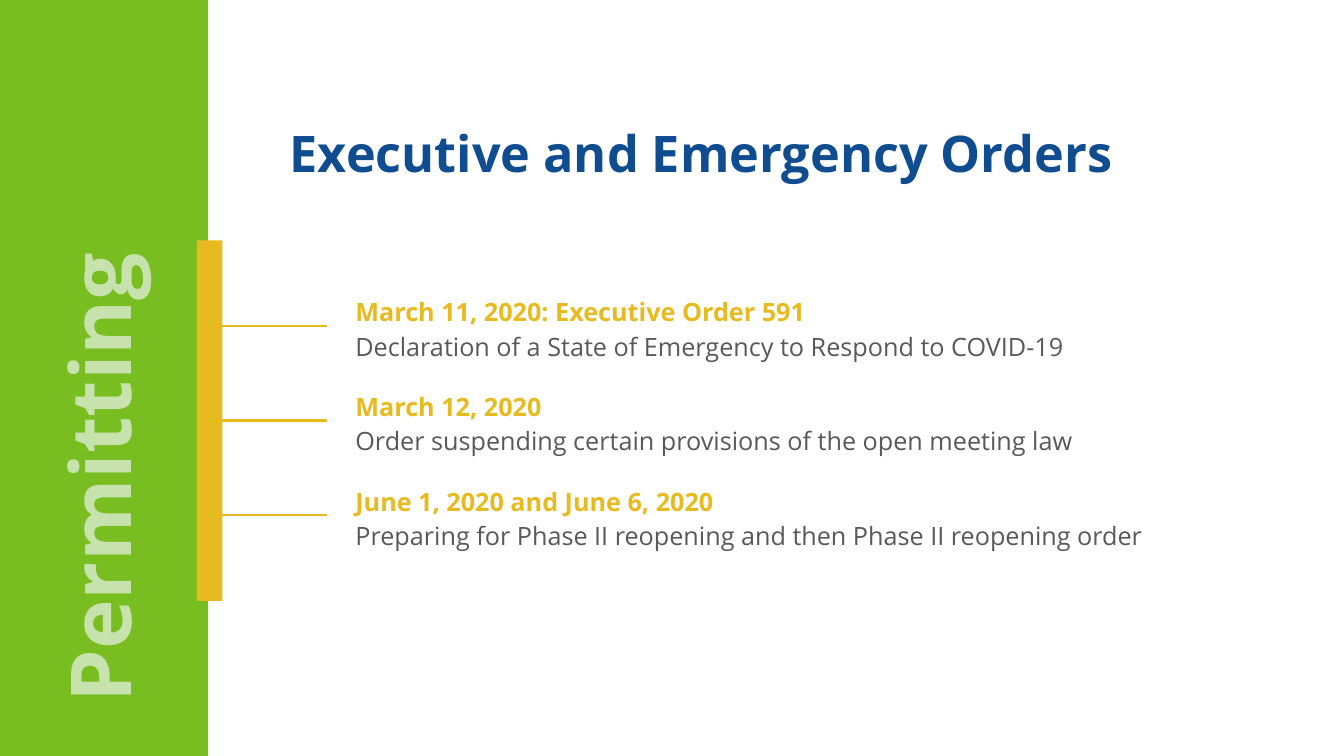
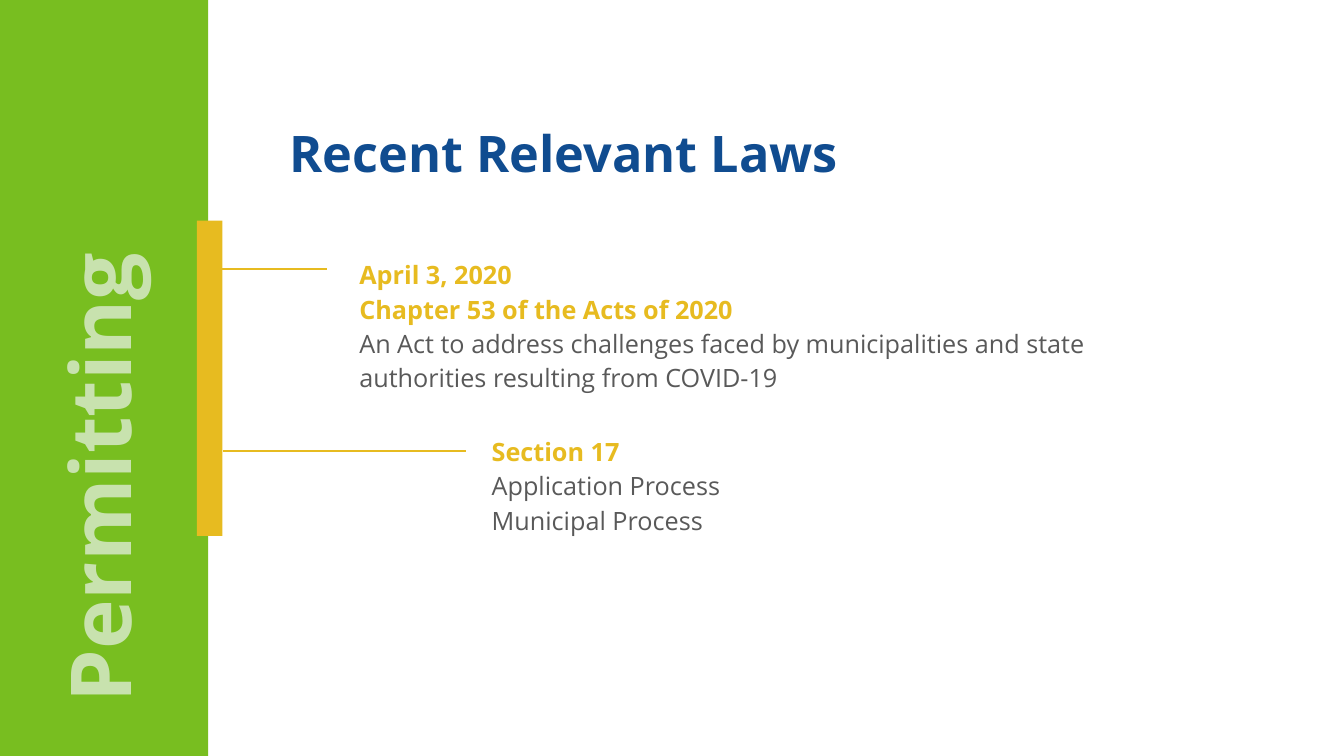
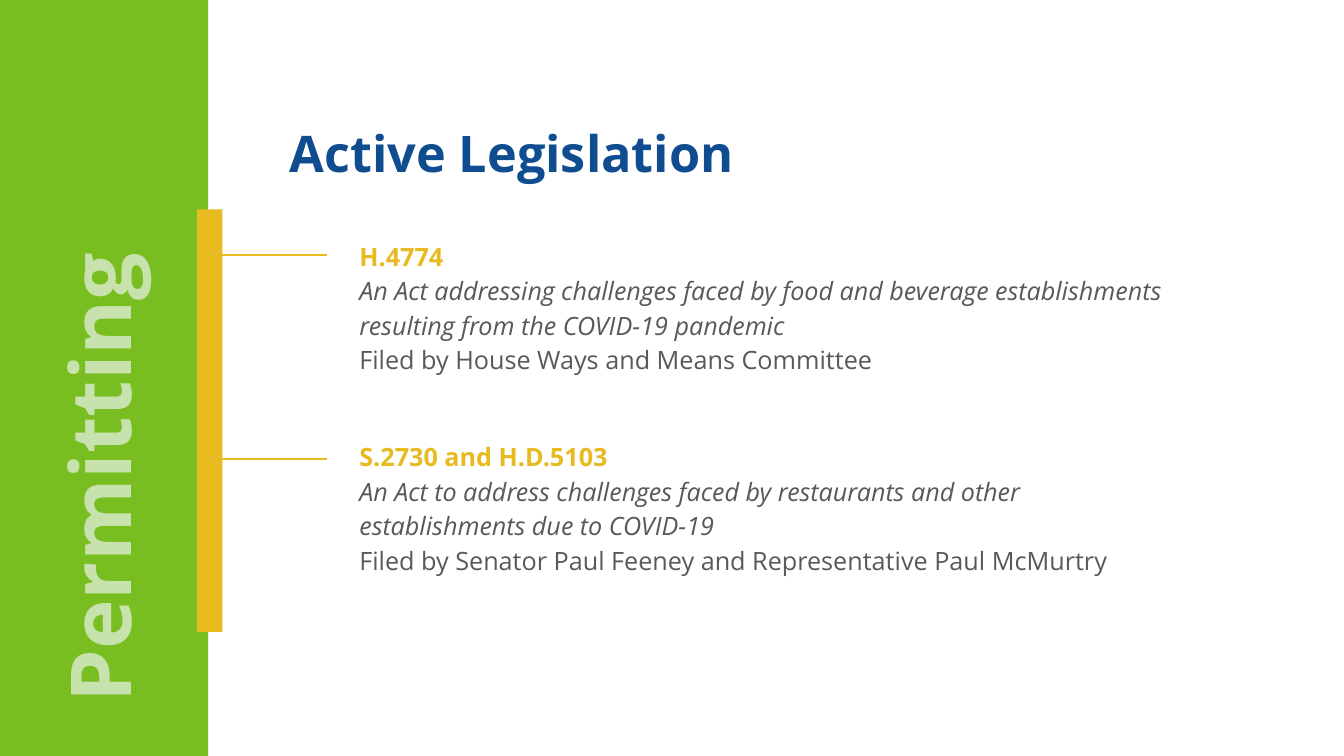
import dataclasses

import pptx
import pptx.dml.color
import pptx.enum.shapes
import pptx.enum.text
import pptx.oxml
import pptx.util

# Shared look
COLOURS = {
    "band": "78BE20",
    "accent": "E7BB20",
    "body": "595959",
    "label": "C8E2AE",
    "title": "104C90",
}
FONT = "Open Sans"
WIDTH, HEIGHT = pptx.util.Inches(13.33), pptx.util.Inches(7.5)
TOPIC = "Permitting"

# Shared places, in percent of the slide's width or height
BAND_WIDTH = 15.5
BAR_CENTRE, BAR_WIDTH = 15.6, 1.9
RULE_END = 24.3
TITLE_PLACE = (20.8, 15.5, 67.8, 9.5)
LABEL_PLACE = (-11.55, 53.33, 37.7, 14.8)
LINE_HEIGHT, BOX_MARGIN = 4.6, 0.95

# Paragraph styles: colour, bold, italic
STYLES = {
    "heading": ("accent", True, False),
    "plain": ("body", False, False),
    "act": ("body", False, True),
}


@dataclasses.dataclass
class Entry:
    left: float
    top: float
    width: float
    lines: int
    rule: float
    paragraphs: list
    rule_start: float = BAND_WIDTH
    rule_end: float = RULE_END


def across(share):
    return round(WIDTH * share / 100)


def down(share):
    return round(HEIGHT * share / 100)


def frame(left, top, width, height):
    return across(left), down(top), across(width), down(height)


def colour(name):
    return pptx.dml.color.RGBColor.from_string(COLOURS[name])


# Text
def add_span(para, text, size, tone, bold=True, italic=False):
    span = para.add_run()
    span.text = text
    font = span.font
    font.name, font.size = FONT, pptx.util.Pt(size)
    font.bold, font.italic = bold, italic
    font.color.rgb = colour(tone)


def set_up_text(box):
    text = box.text_frame
    text.word_wrap = True
    text.auto_size = pptx.enum.text.MSO_AUTO_SIZE.SHAPE_TO_FIT_TEXT
    text.vertical_anchor = pptx.enum.text.MSO_ANCHOR.TOP
    text.paragraphs[0].alignment = pptx.enum.text.PP_ALIGN.LEFT
    return text


def add_title(page, text):
    box = page.shapes.title
    box.left, box.top, box.width, box.height = frame(*TITLE_PLACE)
    add_span(set_up_text(box).paragraphs[0], text, 36, "title")


def add_side_label(page):
    box = page.shapes.add_textbox(*frame(*LABEL_PLACE))
    box.rotation = 270
    add_span(set_up_text(box).paragraphs[0], TOPIC, 60, "label")


# Bars and rules
def add_block(page, place, tone):
    block = page.shapes.add_shape(
        pptx.enum.shapes.MSO_SHAPE.RECTANGLE, *frame(*place))
    block.shadow.inherit = False
    block.fill.solid()
    block.fill.fore_color.rgb = colour(tone)
    block.line.fill.background()


def add_rule(page, start, end, height):
    rule = page.shapes.add_connector(
        pptx.enum.shapes.MSO_CONNECTOR.STRAIGHT,
        across(start), down(height), across(end), down(height))
    rule.line.color.rgb = colour("accent")
    rule.line.width = pptx.util.Pt(1.5)
    properties = rule._element.spPr
    properties.append(pptx.oxml.parse_xml(
        '<a:effectLst xmlns:a='
        '"http://schemas.openxmlformats.org/drawingml/2006/main"/>'))


def add_entry(page, entry):
    height = BOX_MARGIN + LINE_HEIGHT * entry.lines
    box = page.shapes.add_textbox(
        *frame(entry.left, entry.top, entry.width, height))
    text = set_up_text(box)
    for number, (style, words) in enumerate(entry.paragraphs):
        para = text.add_paragraph() if number else text.paragraphs[0]
        para.line_spacing = 1.14
        add_span(para, words, 18, *STYLES[style])
    add_rule(page, entry.rule_start, entry.rule_end, entry.rule)


def add_page(deck, title, bar_top, bar_height, entries):
    page = deck.slides.add_slide(deck.slide_layouts[5])
    add_title(page, title)
    add_block(page, (0, 0, BAND_WIDTH, 100), "band")
    bar_left = BAR_CENTRE - BAR_WIDTH / 2
    add_block(page, (bar_left, bar_top, BAR_WIDTH, bar_height), "accent")
    for entry in entries:
        add_entry(page, entry)
    add_side_label(page)


# Content
def order_entries():
    orders = [
        (61.4, "March 11, 2020: Executive Order 591",
         "Declaration of a State of Emergency to Respond to COVID-19"),
        (58.7, "March 12, 2020",
         "Order suspending certain provisions of the open meeting law"),
        (62.9, "June 1, 2020 and June 6, 2020",
         "Preparing for Phase II reopening and then Phase II reopening order"),
    ]
    first, step = 38, 12.55
    entries = []
    for row, (width, date, summary) in enumerate(orders):
        top = first + step * row
        middle = top + BOX_MARGIN / 2 + LINE_HEIGHT
        entries.append(Entry(25.7, top, width, 2, middle,
                             [("heading", date), ("plain", summary)]))
    return entries


def law_entries():
    return [
        Entry(26, 33.1, 59.7, 4, 35.6, [
            ("heading", "April 3, 2020"),
            ("heading", "Chapter 53 of the Acts of 2020"),
            ("plain", "An Act to address challenges faced by municipalities "
                      "and state authorities resulting from COVID-19"),
        ]),
        Entry(35.85, 56.5, 20.55, 3, 59.7, [
            ("heading", "Section 17"),
            ("plain", "Application Process"),
            ("plain", "Municipal Process"),
        ], rule_start=16.6, rule_end=34.7),
    ]


def bill_entries():
    return [
        Entry(26, 30.7, 61.4, 4, 33.7, [
            ("heading", "H.4774"),
            ("act", "An Act addressing challenges faced by food and beverage "
                    "establishments resulting from the COVID-19 pandemic"),
            ("plain", "Filed by House Ways and Means Committee"),
        ]),
        Entry(26, 57.2, 61.4, 4, 60.7, [
            ("heading", "S.2730 and H.D.5103"),
            ("act", "An Act to address challenges faced by restaurants and "
                    "other establishments due to COVID-19"),
            ("plain", "Filed by Senator Paul Feeney and Representative "
                      "Paul McMurtry"),
        ]),
    ]


def main():
    deck = pptx.Presentation()
    deck.slide_width, deck.slide_height = WIDTH, HEIGHT
    add_page(deck, "Executive and Emergency Orders", 31.8, 47.7,
             order_entries())
    add_page(deck, "Recent Relevant Laws", 29.2, 41.7, law_entries())
    add_page(deck, "Active Legislation", 27.7, 55.9, bill_entries())
    deck.save("out.pptx")


if __name__ == "__main__":
    main()
